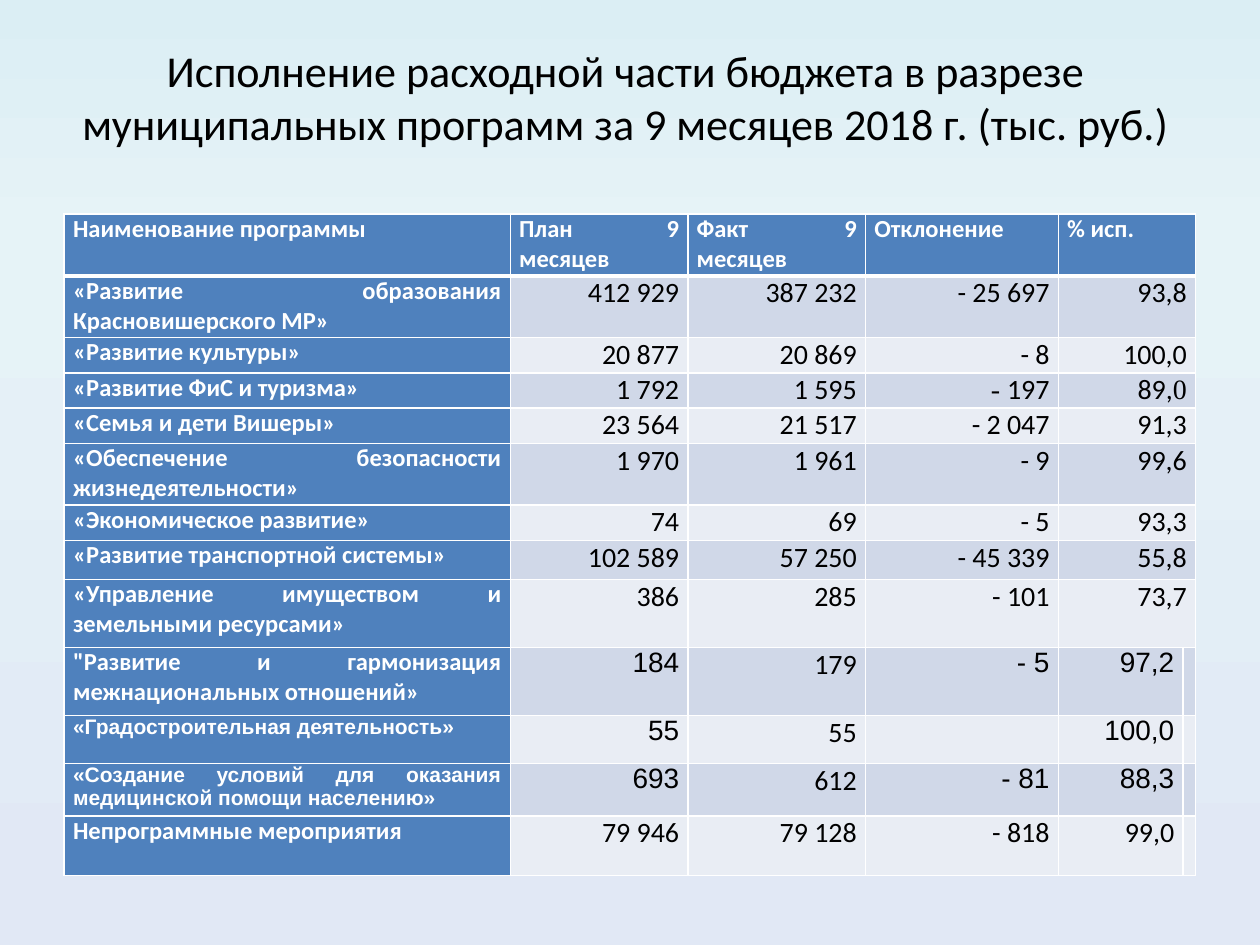
"""Build a slide with the budget spending table by municipal programme."""
from copy import deepcopy

from lxml import etree
from pptx import Presentation
from pptx.dml.color import RGBColor
from pptx.enum.text import MSO_ANCHOR, MSO_AUTO_SIZE, PP_ALIGN
from pptx.oxml.ns import qn
from pptx.util import Inches, Pt

CENTER, JUSTIFY, RIGHT = PP_ALIGN.CENTER, PP_ALIGN.JUSTIFY, PP_ALIGN.RIGHT
MIDDLE, NO_AUTOFIT = MSO_ANCHOR.MIDDLE, MSO_AUTO_SIZE.NONE
TITLE_ONLY = 5

COLORS = {
    "text": "000000",
    "white": "FFFFFF",
    "accent": "4F81BD",
    "odd_row": "D0D8E8",
    "even_row": "E9EDF4",
}
BACKGROUND_STOPS = [(0, "DBEEF4"), (0.25, "E6F3F7"), (1, "E1E8F5")]
TITLE = (
    "Исполнение расходной части бюджета в разрезе "
    "муниципальных программ за 9 месяцев 2018 г. (тыс. руб.)"
)
COLUMN_WIDTHS = [3.54, 1.41, 1.41, 1.53, 0.99, 0.1]
ROW_HEIGHTS = [0.49, 0.49, 0.28, 0.28, 0.28, 0.49, 0.28, 0.31, 0.54, 0.54, 0.38, 0.42, 0.47]
ROWS = [
    ["Наименование программы", "План 9 месяцев", "Факт 9 месяцев", "Отклонение", "% исп."],
    ["«Развитие образования Красновишерского МР»", "412 929", "387 232", "- 25 697", "93,8"],
    ["«Развитие культуры»", "20 877", "20 869", "- 8", "100,0"],
    ["«Развитие ФиС и туризма»", "1 792", "1 595", "- 197", "89,0"],
    ["«Семья и дети Вишеры»", "23 564", "21 517", "- 2 047", "91,3"],
    ["«Обеспечение безопасности жизнедеятельности»", "1 970", "1 961", "- 9", "99,6"],
    ["«Экономическое развитие»", "74", "69", "- 5", "93,3"],
    ["«Развитие транспортной системы»", "102 589", "57 250", "- 45 339", "55,8"],
    ["«Управление имуществом и земельными ресурсами»", "386", "285", "- 101", "73,7"],
    ["\"Развитие и гармонизация межнациональных отношений»", "184", "179", "- 5", "97,2"],
    ["«Градостроительная деятельность»", "55", "55", "", "100,0"],
    ["«Создание условий для оказания медицинской помощи населению»", "693", "612", "- 81", "88,3"],
    ["Непрограммные мероприятия", "79 946", "79 128", "- 818", "99,0"],
]
ARIAL_NUMBER_ROWS, ARIAL_NAME_ROWS = (9, 10, 11), (10, 11)
SPLIT_ROWS = (9, 10, 11, 12)
SERIF_RUNS = {
    (3, 3): [("- ", "Times New Roman"), ("197", "Calibri")],
    (3, 4): [("89,", "Calibri"), ("0", "Times New Roman")],
}


class BudgetSlide:
    """Hold the style and the current slide."""

    def __init__(self, presentation):
        self.slide = presentation.slides.add_slide(presentation.slide_layouts[TITLE_ONLY])

    def set_attributes(self, target, values):
        for name, value in values.items():
            setattr(target, name, value)

    def add_background(self, stops):
        fill = self.slide.background.fill
        fill.gradient()
        fill.gradient_angle = 270
        stop_list = self.slide.element.find(".//" + qn("a:gsLst"))
        stop_list.append(deepcopy(stop_list[-1]))
        for stop, (position, color) in zip(fill.gradient_stops, stops):
            stop.position = position
            stop.color.rgb = RGBColor.from_string(color)

    def add_run(self, paragraph, text, font, size, color, bold=False):
        run = paragraph.add_run()
        run.text = text
        self.set_attributes(run.font, {"name": font, "size": Pt(size), "bold": bold})
        run.font.color.rgb = RGBColor.from_string(COLORS[color])

    def add_title(self, text, left, top, width, height):
        title = self.slide.shapes.title
        box = {"left": left, "top": top, "width": width, "height": height}
        self.set_attributes(title, {name: Inches(value) for name, value in box.items()})
        frame = title.text_frame
        self.set_attributes(frame, {
            "word_wrap": True, "auto_size": NO_AUTOFIT, "vertical_anchor": MIDDLE,
        })
        paragraph = frame.paragraphs[0]
        paragraph.alignment = CENTER
        self.add_run(paragraph, text, "Calibri", 25.2, "text")

    def add_borders(self, cell, widths):
        properties = cell._tc.get_or_add_tcPr()
        for index, (side, width) in enumerate(widths.items()):
            line = etree.Element(qn(f"a:ln{side}"), w=str(Pt(width)))
            solid = etree.SubElement(line, qn("a:solidFill"))
            etree.SubElement(solid, qn("a:srgbClr"), val=COLORS["white"])
            properties.insert(index, line)

    def format_cell(self, cell, row, column):
        is_label = row == 0 or column == 0
        is_filler = column == len(COLUMN_WIDTHS) - 1
        side = Inches(0 if is_filler else 0.07)
        self.set_attributes(cell, {
            "margin_left": side, "margin_right": side, "margin_top": 0, "margin_bottom": 0,
        })
        band = "odd_row" if row % 2 else "even_row"
        cell.fill.solid()
        cell.fill.fore_color.rgb = RGBColor.from_string(COLORS["accent" if is_label else band])
        self.add_borders(cell, {
            "L": 1, "R": 1, "T": 3 if row == 1 else 1, "B": 3 if row == 0 else 1,
        })
        paragraph = cell.text_frame.paragraphs[0]
        paragraph.alignment = JUSTIFY if is_label else RIGHT
        is_arial = (
            row in ARIAL_NAME_ROWS if column == 0
            else row in ARIAL_NUMBER_ROWS and column != 2
        )
        font = "Arial" if is_arial else "Calibri"
        size = (12 if is_arial else 14) if is_label else 16
        text = "" if is_filler else ROWS[row][column]
        for part, part_font in SERIF_RUNS.get((row, column), [(text, font)]):
            self.add_run(paragraph, part, part_font, size, "white" if is_label else "text", is_label)

    def add_table(self, left, top):
        table = self.slide.shapes.add_table(
            len(ROW_HEIGHTS), len(COLUMN_WIDTHS), Inches(left), Inches(top),
            Inches(sum(COLUMN_WIDTHS)), Inches(sum(ROW_HEIGHTS)),
        ).table
        self.set_attributes(table, {"first_row": False, "horz_banding": False})
        for column, width in zip(table.columns, COLUMN_WIDTHS):
            column.width = Inches(width)
        for row_index, height in enumerate(ROW_HEIGHTS):
            table.rows[row_index].height = Inches(height)
            if row_index not in SPLIT_ROWS:
                table.cell(row_index, 4).merge(table.cell(row_index, 5))
            for column_index in range(len(COLUMN_WIDTHS)):
                self.format_cell(table.cell(row_index, column_index), row_index, column_index)


def main():
    presentation = Presentation()
    presentation.slide_width = Inches(10)
    presentation.slide_height = Inches(7.5)
    budget = BudgetSlide(presentation)
    budget.add_background(BACKGROUND_STOPS)
    budget.add_title(TITLE, 0.28, 0.3, 9.37, 0.93)
    budget.add_table(0.51, 1.7)
    presentation.save("out.pptx")


if __name__ == "__main__":
    main()
